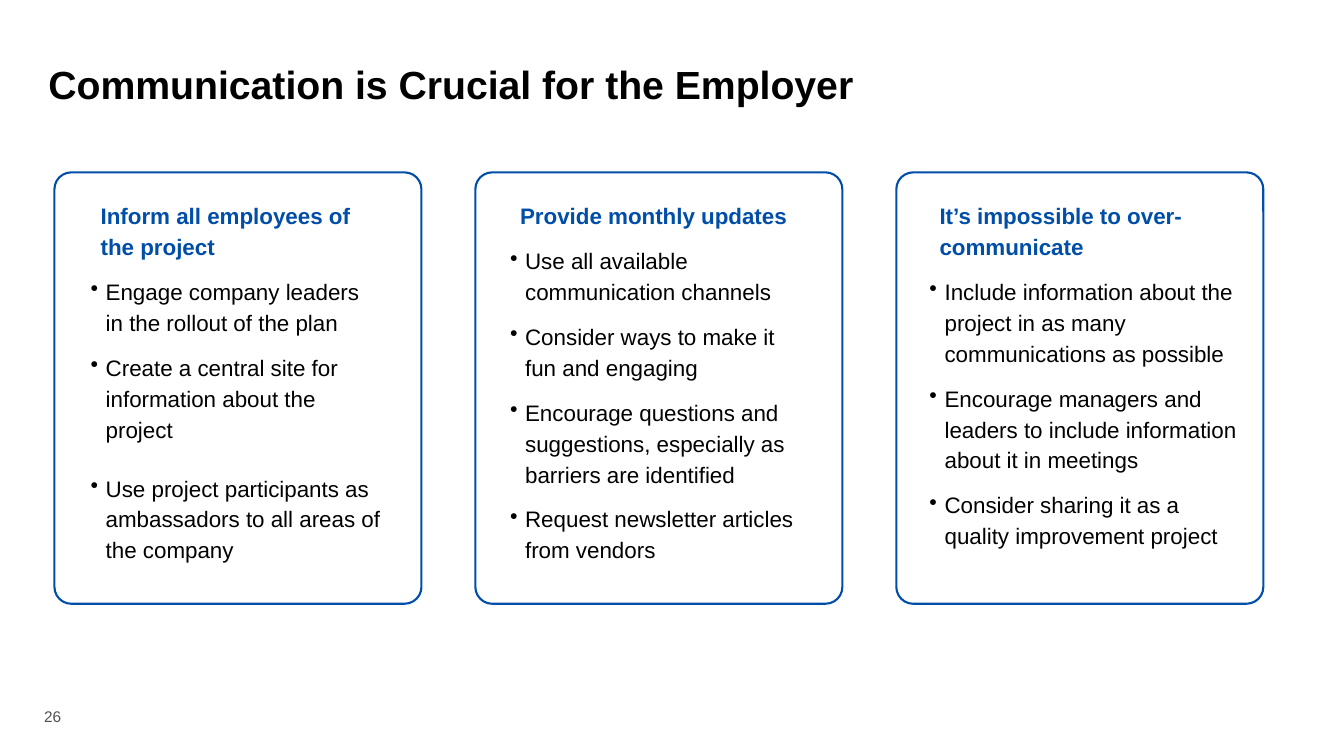
from dataclasses import dataclass

from lxml import etree
from pptx import Presentation
from pptx.dml.color import RGBColor
from pptx.enum.shapes import MSO_SHAPE
from pptx.enum.text import MSO_ANCHOR, PP_ALIGN
from pptx.oxml.ns import qn
from pptx.util import Inches, Pt

ROUND = MSO_SHAPE.ROUNDED_RECTANGLE
TOP, MIDDLE, BOTTOM = MSO_ANCHOR.TOP, MSO_ANCHOR.MIDDLE, MSO_ANCHOR.BOTTOM
LEFT = PP_ALIGN.LEFT


@dataclass(frozen=True)
class Theme:
    font: str = "Arial"
    blue: str = "004EA8"
    black: str = "000000"
    gray: str = "505050"
    title: int = 28
    body: int = 16
    small: int = 11
    leading: float = 1.15


@dataclass(frozen=True)
class Card:
    text_left: float
    text_width: float
    head: str
    points: tuple[str, ...]
    wide_gap: int = -1  # index of the point with extra space above


THEME = Theme()
CARD_LEFT, CARD_STEP = 0.54, 4.175
CARD_TOP, CARD_WIDTH, CARD_HEIGHT = 1.71, 3.64, 4.28
TEXT_TOP, TEXT_HEIGHT = 1.92, 4.07

CARDS = (
    Card(0.8, 3.08, "Inform all employees of the project", (
        "Engage company leaders in the rollout of the plan",
        "Create a central site for information about the project",
        "Use project participants as ambassadors to all areas of the company",
    ), wide_gap=2),
    Card(4.96, 3.08, "Provide monthly updates", (
        "Use all available communication channels",
        "Consider ways to make it fun and engaging",
        "Encourage questions and suggestions, especially as barriers are identified",
        "Request newsletter articles from vendors",
    )),
    Card(9.12, 3.28, "It’s impossible to over-communicate", (
        "Include information about the project in as many communications as possible",
        "Encourage managers and leaders to include information about it in meetings",
        "Consider sharing it as a quality improvement project",
    )),
)


def write(para, text: str, *, size: int, color: str = THEME.black,
          bold: bool = False, leading: float = THEME.leading, before: int = 0,
          after: int = 0, margin: float = 0, indent: float = 0,
          bullet: str = "") -> None:
    """Fill one paragraph and set its format."""
    props = para._p.get_or_add_pPr()
    props.set("marL", str(Inches(margin)))
    props.set("indent", str(Inches(indent)))
    if bullet:
        etree.SubElement(props, qn("a:buChar")).set("char", bullet)
    para.alignment = LEFT
    para.line_spacing = leading
    para.space_before, para.space_after = Pt(before), Pt(after)
    run = para.add_run()
    run.text = text
    font = run.font
    font.name, font.size, font.bold = THEME.font, Pt(size), bold
    font.color.rgb = RGBColor.from_string(color)


def add_box(slide, left: float, top: float, width: float, height: float,
            anchor=TOP):
    """Add a wrapping text box and return its text frame."""
    box = slide.shapes.add_textbox(
        Inches(left), Inches(top), Inches(width), Inches(height))
    frame = box.text_frame
    frame.word_wrap = True
    frame.vertical_anchor = anchor
    return frame


def add_title(slide, text: str) -> None:
    title = slide.shapes.title
    title.left, title.top = Inches(0.38), Inches(0.5)
    title.width, title.height = Inches(11.49), Inches(0.6)
    frame = title.text_frame
    frame.word_wrap = True
    frame.vertical_anchor = MIDDLE
    write(frame.paragraphs[0], text, size=THEME.title, bold=True)


def add_card(slide, card: Card, left: float) -> None:
    # Outline
    shape = slide.shapes.add_shape(
        ROUND, Inches(left), Inches(CARD_TOP),
        Inches(CARD_WIDTH), Inches(CARD_HEIGHT))
    shape.adjustments[0] = 0.046
    shape.shadow.inherit = False
    shape.fill.background()
    shape.line.color.rgb = RGBColor.from_string(THEME.blue)
    shape.line.width = Pt(1.5)

    # Heading and points
    frame = add_box(slide, card.text_left, TEXT_TOP, card.text_width, TEXT_HEIGHT)
    write(frame.paragraphs[0], card.head, size=THEME.body, color=THEME.blue,
          bold=True, after=10, margin=0.1)
    for index, point in enumerate(card.points):
        write(frame.add_paragraph(), point, size=THEME.body,
              before=10 if index == card.wide_gap else 0, after=10,
              margin=0.15, indent=-0.15, bullet="•")


def main() -> None:
    deck = Presentation()
    deck.slide_width, deck.slide_height = Inches(13.33), Inches(7.5)
    slide = deck.slides.add_slide(deck.slide_layouts[5])

    add_title(slide, "Communication is Crucial for the Employer")
    for index, card in enumerate(CARDS):
        add_card(slide, card, CARD_LEFT + index * CARD_STEP)

    # Page number
    frame = add_box(slide, 0.34, 6.97, 0.5, 0.28, BOTTOM)
    write(frame.paragraphs[0], "26", size=THEME.small, color=THEME.gray, leading=1)

    deck.save("out.pptx")


if __name__ == "__main__":
    main()
